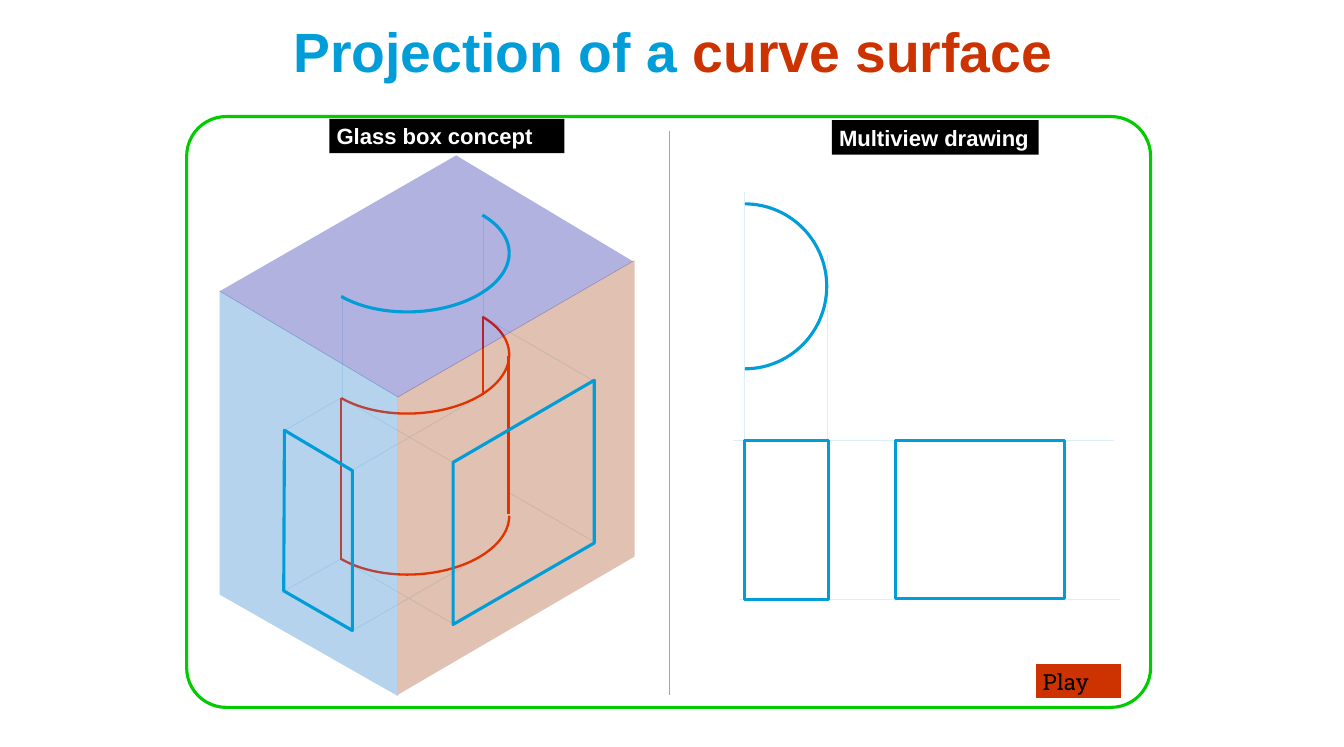
from math import atan2, cos, pi, sin

from lxml.etree import SubElement
from pptx import Presentation
from pptx.dml.color import RGBColor
from pptx.enum.shapes import MSO_CONNECTOR, MSO_SHAPE
from pptx.enum.text import MSO_ANCHOR, MSO_AUTO_SIZE, PP_ALIGN
from pptx.oxml.ns import qn
from pptx.util import Pt

GUIDE, BLUE, RED = "DBEFF9", "009DD9", "FF3300"
color = RGBColor.from_string

deck = Presentation()
deck.slide_width, deck.slide_height = Pt(1296), Pt(720)
page = deck.slides.add_slide(deck.slide_layouts[5])


def draw_line(x1, y1, x2, y2, line_color, width):
    line = page.shapes.add_connector(
        MSO_CONNECTOR.STRAIGHT, Pt(x1), Pt(y1), Pt(x2), Pt(y2))
    line.line.color.rgb = color(line_color)
    line.line.width = Pt(width)
    SubElement(line._element.spPr, qn("a:effectLst"))


def draw_outline(points, line_color=None, width=0, close=True):
    corners = [(Pt(x), Pt(y)) for x, y in points]
    builder = page.shapes.build_freeform(*corners[0])
    builder.add_line_segments(corners[1:], close=close)
    outline = builder.convert_to_shape()
    outline.shadow.inherit = False
    outline.fill.background()
    if line_color:
        outline.line.color.rgb = color(line_color)
        outline.line.width = Pt(width)
    else:
        outline.line.fill.background()
    return outline


# Title
title = page.shapes.title
title.left, title.top, title.width, title.height = Pt(275.8), Pt(12.2), Pt(753.8), Pt(72)
title.text_frame.word_wrap = False
title.text_frame.auto_size = MSO_AUTO_SIZE.NONE
title.text_frame.vertical_anchor = MSO_ANCHOR.MIDDLE
para = title.text_frame.paragraphs[0]
para.alignment = PP_ALIGN.LEFT
para.font.name, para.font.size, para.font.bold = "Arial", Pt(53.3), True
for words, words_color in (("Projection of a ", BLUE), ("curve surface", "CC3300")):
    span = para.add_run()
    span.text = words
    span.font.color.rgb = color(words_color)

# Frame and divider
frame = page.shapes.add_shape(
    MSO_SHAPE.ROUNDED_RECTANGLE, Pt(180), Pt(112.3), Pt(929.5), Pt(569.5))
frame.adjustments[0] = 0.067
frame.shadow.inherit = False
frame.fill.background()
frame.line.color.rgb = color("00CC00")
frame.line.width = Pt(3)
draw_line(645.1, 126.7, 645.1, 669.6, "FF9900", 0.75)

# Labels and button
labels = [
    ("Glass box concept", MSO_SHAPE.RECTANGLE, 317.5, 114.5, 226.8, "000000", "FFFFFF", "Arial", True),
    ("Multiview drawing", MSO_SHAPE.RECTANGLE, 802.1, 115.9, 199.4, "000000", "FFFFFF", "Arial", True),
    ("Play", MSO_SHAPE.ACTION_BUTTON_CUSTOM, 998.6, 640.1, 82.1, "CC3300", "000000", "Roboto Slab", False),
]
for words, kind, left, top, width, fill, ink, font, bold in labels:
    box = page.shapes.add_shape(kind, Pt(left), Pt(top), Pt(width), Pt(33.1))
    box.shadow.inherit = False
    box.fill.solid()
    box.fill.fore_color.rgb = color(fill)
    box.line.fill.background()
    box.text_frame.word_wrap = True
    box.text_frame.margin_right = 0
    box.text_frame.vertical_anchor = MSO_ANCHOR.MIDDLE
    para = box.text_frame.paragraphs[0]
    para.text = words
    para.alignment = PP_ALIGN.LEFT
    para.font.name, para.font.size, para.font.bold = font, Pt(21.3), bold
    para.font.color.rgb = color(ink)

# Projection guides: multiview first, then glass box
guides = [
    (1080, 577.4, 712.8, 577.4),
    (1074.2, 424.8, 707, 424.8),
    (717.8, 185, 717.8, 430.6),
    (797.8, 246.2, 797.8, 427),
    (329.8, 383, 273.6, 415.4),
    (329.8, 383.8, 437, 445.7),
    (465.8, 305.3, 573.8, 367.9),
    (468.7, 378.7, 340.6, 452.9),
    (329.8, 383.8, 329.8, 285.8),
    (465.8, 305.3, 465.8, 207.4),
    (327.6, 539.3, 270.7, 571.7),
    (466.6, 535, 337.7, 609.1),
    (328.3, 538.6, 435.6, 600.5),
    (490.3, 474.5, 572.4, 522),
]
for guide in guides:
    draw_line(*guide, GUIDE, 0.75)

# Arcs, each from a centre, two conjugate radii and a sweep
center_x, center_y = 397.1, 344.5
along, across = (68, -39.2), (64.8, 37.4)
rightmost = atan2(across[0], -along[0])
steps = 60
arcs = []
for x, y, start, side, sweep in (
    (center_x, center_y, along, across, pi),
    (center_x, center_y + 155.2, along, across, rightmost),
    (center_x, center_y - 98, along, across, pi),
    (718.2, 276, (0, 79.5), (79, 0), pi),
):
    angles = [sweep * step / steps for step in range(steps + 1)]
    arcs.append([(x - start[0] * cos(angle) + side[0] * sin(angle),
                  y - start[1] * cos(angle) + side[1] * sin(angle))
                 for angle in angles])
surface_top, surface_bottom, top_view, plan_view = arcs

# Curved surface inside the box
for arc in (surface_top, surface_bottom):
    draw_outline(arc, RED, 2.25, close=False)
for x, top, bottom in ((329, 383.8, 539.3), (490.3, 343.4, 495.4), (465.8, 305.3, 380.9)):
    draw_line(x, top, x, bottom, RED, 2.25)

# Glass faces: right, top, left
faces = [
    ("993300", [(383.8, 382.3), (612, 250.6), (612, 536.4), (383.8, 669.6)]),
    ("000099", [(211.7, 280.8), (383.8, 383), (610.6, 252), (439.9, 149.8)]),
    ("0F6FC6", [(211.7, 280.1), (383.8, 382.3), (383.8, 671), (211.7, 573.1)]),
]
for tint, corners in faces:
    face = draw_outline(corners)
    face.fill.solid()
    face.fill.fore_color.rgb = color(tint)
    tint_element = face._element.spPr.find(qn("a:solidFill")).find(qn("a:srgbClr"))
    SubElement(tint_element, qn("a:alpha"), val="30000")

# Views projected on the glass and in the multiview drawing
views = [
    [(437, 445.7), (437, 601.9), (573.1, 523.4), (573.1, 366.5)],
    [(274.3, 414.7), (339.8, 453.6), (339.8, 607.7), (273.6, 569.5)],
    [(717.8, 424.8), (717.8, 578.2), (798.5, 578.2), (798.5, 424.8)],
    [(863.3, 424.8), (863.3, 576.7), (1026.7, 576.7), (1026.7, 424.8)],
]
for view in views:
    draw_outline(view, BLUE, 3)
for arc in (top_view, plan_view):
    draw_outline(arc, BLUE, 3, close=False)

deck.save("out.pptx")
